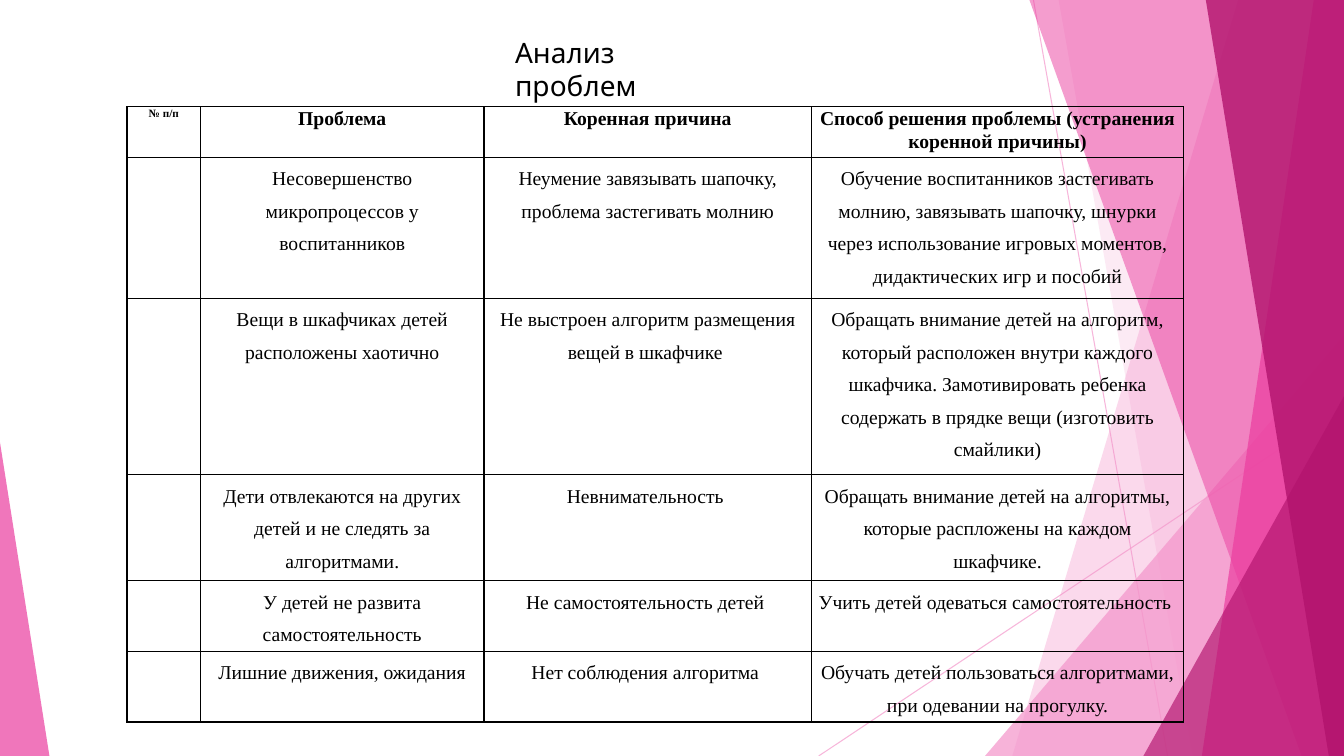
"""Build the slide with the table of problems, root causes and solutions."""
import pptx
import pptx.dml.color
import pptx.enum.shapes
import pptx.enum.text
import pptx.oxml
import pptx.oxml.ns
import pptx.util
from pptx.util import Inches

WIDTH, HEIGHT = 13.33, 7.5
SIDES = ("lnL", "lnR", "lnT", "lnB")


def paint(fill, color, opacity=100):
    fill.solid()
    fill.fore_color.rgb = pptx.dml.color.RGBColor.from_string(color)
    if opacity < 100:
        tint = fill._xPr.find(".//" + pptx.oxml.ns.qn("a:srgbClr"))
        alpha = pptx.oxml.parse_xml(f'<a:alpha {pptx.oxml.ns.nsdecls("a")} val="{opacity * 1000}"/>')
        tint.append(alpha)


def write(paragraph, text, font, size, bold=False):
    run = paragraph.add_run()
    run.text = text
    run.font.name = font
    run.font.size = pptx.util.Pt(size)
    run.font.bold = bold
    paint(run.font.fill, "000000")


deck = pptx.Presentation()
deck.slide_width, deck.slide_height = Inches(WIDTH), Inches(HEIGHT)
slide = deck.slides.add_slide(deck.slide_layouts[6])
shapes = slide.shapes

for x1, y1, x2, y2 in [(10.25, 0, 11.58, 7.5), (13.33, 4.03, 8.12, 7.5)]:
    ray = shapes.add_connector(pptx.enum.shapes.MSO_CONNECTOR.STRAIGHT,
                               Inches(x1), Inches(y1), Inches(x2), Inches(y2))
    ray.line.width = pptx.util.Pt(0.75)
    paint(ray.line.fill, "F496CB", 70)
    ray._element.spPr.append(pptx.oxml.parse_xml(f'<a:effectLst {pptx.oxml.ns.nsdecls("a")}/>'))

# Each band: top x, bottom x; each triangle: left, top, width, apex
facets = [
    ("band", (12.28, 10.04), "F496CB", 36),
    ("band", (10.5, 11.83), "F496CB", 20),
    ("triangle", (9.77, 3.33, 3.56, 1), "F496CB", 72),
    ("band", (10.21, 12.91), "EB3D9F", 50),
    ("band", (13.03, 11.92), "EB3D9F", 70),
    ("band", (11.96, 13.18), "B2136D", 80),
    ("triangle", (11.34, 3.93, 1.99, 1), "B2136D", 66),
    ("triangle", (0, 4.39, 0.49, 0), "EB3D9F", 70),
]
for kind, place, color, opacity in facets:
    if kind == "band":
        top_x, bottom_x = place
        outline = shapes.build_freeform(Inches(top_x), 0)
        corners = [(WIDTH, 0), (WIDTH, HEIGHT), (bottom_x, HEIGHT)]
        outline.add_line_segments([(Inches(x), Inches(y)) for x, y in corners], close=True)
        facet = outline.convert_to_shape()
    else:
        left, top, width, apex = place
        facet = shapes.add_shape(pptx.enum.shapes.MSO_SHAPE.ISOSCELES_TRIANGLE,
                                 Inches(left), Inches(top), Inches(width), Inches(HEIGHT - top))
        facet.adjustments[0] = apex
    facet.shadow.inherit = False
    facet.line.fill.background()
    paint(facet.fill, color, opacity)

title = shapes.add_textbox(Inches(5.01), Inches(0.3), Inches(2.4), Inches(0.44)).text_frame
title.word_wrap = True
title.auto_size = pptx.enum.text.MSO_AUTO_SIZE.SHAPE_TO_FIT_TEXT
write(title.paragraphs[0], "Анализ проблем", "Karla", 20)

rows = [
    ("№ п/п", "Проблема", "Коренная причина",
     "Способ решения проблемы (устранения коренной причины)"),
    ("", "Несовершенство микропроцессов у воспитанников",
     "Неумение завязывать шапочку, проблема застегивать молнию",
     "Обучение воспитанников застегивать молнию, завязывать шапочку, шнурки через "
     "использование игровых моментов, дидактических игр и пособий"),
    ("", "Вещи в шкафчиках детей расположены хаотично",
     "Не выстроен алгоритм размещения вещей в шкафчике ",
     "Обращать внимание детей на алгоритм, который расположен внутри каждого шкафчика. "
     "Замотивировать ребенка содержать в прядке вещи (изготовить смайлики)"),
    ("", "Дети отвлекаются на других детей и не следять за алгоритмами.",
     "Невнимательность ",
     "Обращать внимание детей на алгоритмы, которые распложены на каждом шкафчике."),
    ("", "У детей не развита самостоятельность", "Не самостоятельность детей ",
     "Учить детей одеваться самостоятельность "),
    ("", "Лишние движения, ожидания", "Нет соблюдения алгоритма ",
     "Обучать детей пользоваться алгоритмами, при одевании на прогулку."),
]
column_widths = [0.73, 2.81, 3.25, 3.69]
row_heights = [0.5, 1.4, 1.75, 1.05, 0.7, 0.7]
problems = shapes.add_table(len(rows), len(column_widths), Inches(1.26), Inches(1.06),
                            Inches(sum(column_widths)), Inches(sum(row_heights))).table
problems.first_row = problems.horz_banding = False
for column, width in zip(problems.columns, column_widths):
    column.width = Inches(width)
for row, height in zip(problems.rows, row_heights):
    row.height = Inches(height)

for r, texts in enumerate(rows):
    for c, text in enumerate(texts):
        cell = problems.cell(r, c)
        cell.margin_left = cell.margin_right = Inches(0.06)
        cell.margin_top = cell.margin_bottom = 0
        for side in SIDES:
            cell._tc.get_or_add_tcPr().append(pptx.oxml.parse_xml(
                f'<a:{side} {pptx.oxml.ns.nsdecls("a")} w="12700"><a:solidFill>'
                f'<a:srgbClr val="000000"/></a:solidFill></a:{side}>'))
        cell.fill.background()
        if text:
            paragraph = cell.text_frame.paragraphs[0]
            paragraph.alignment = pptx.enum.text.PP_ALIGN.CENTER
            paragraph.line_spacing = 1.07 if r == 0 else 1.5
            write(paragraph, text, "Times New Roman", 8 if r == c == 0 else 14, r == 0)

deck.save("out.pptx")
